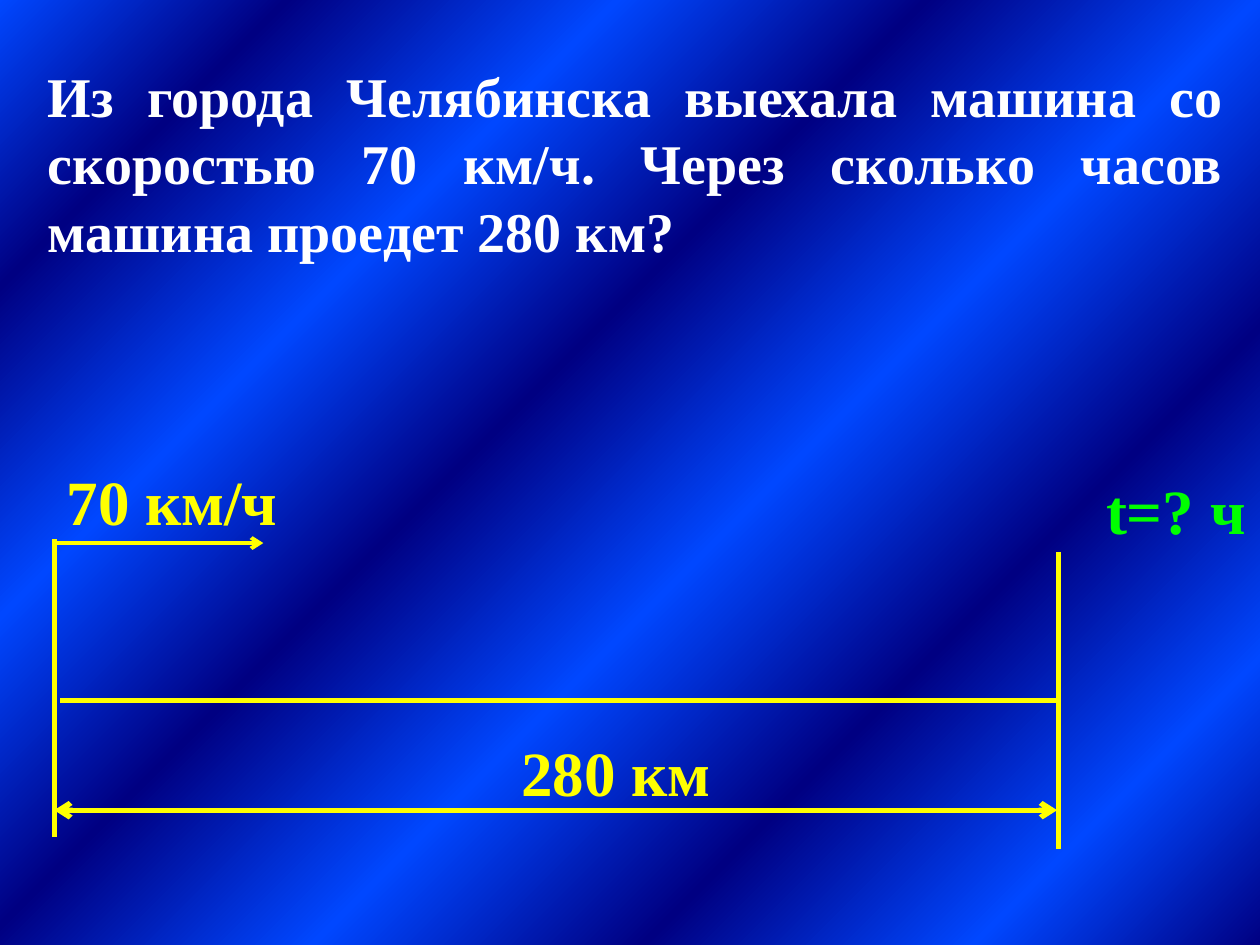
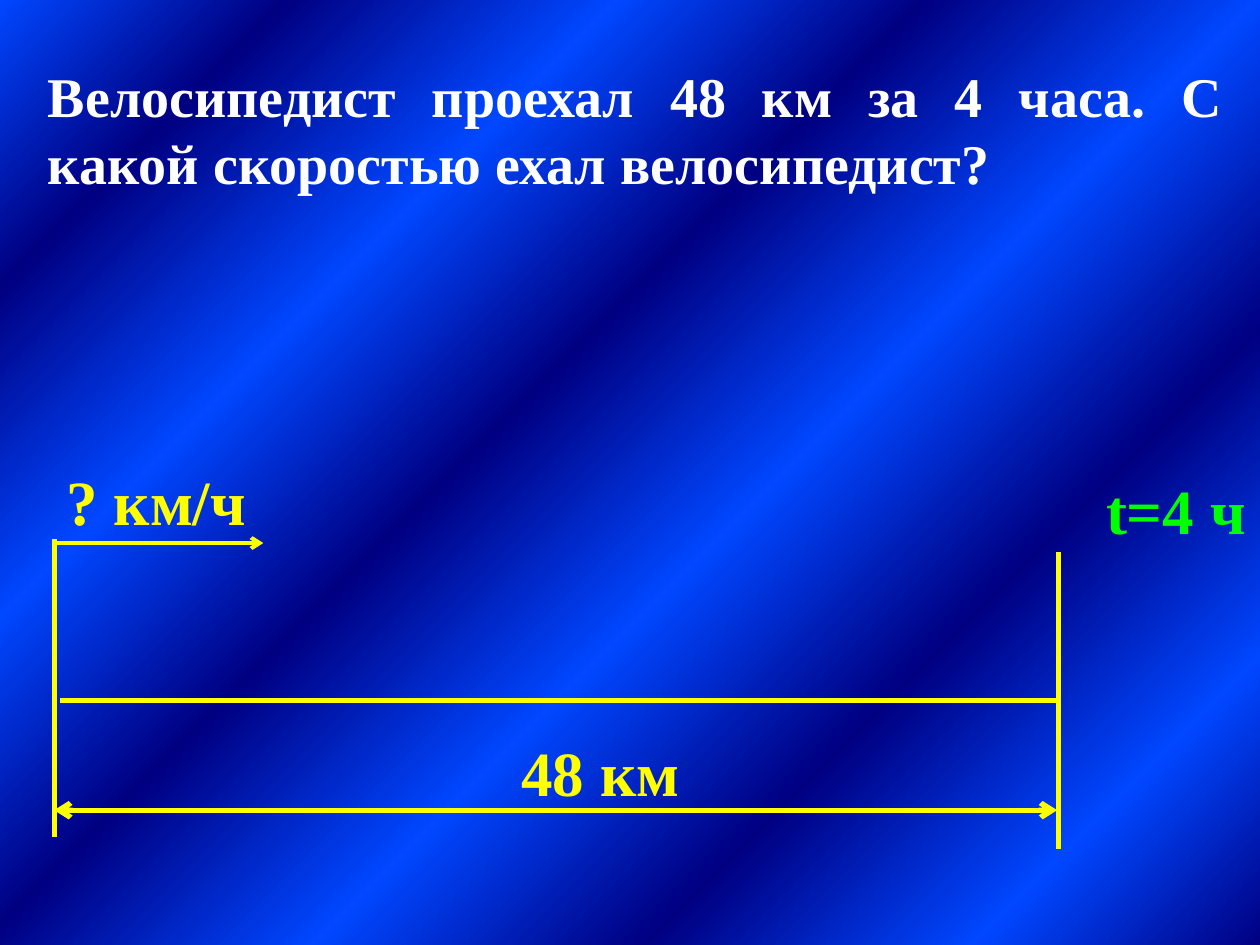
from lxml import etree
from pptx import Presentation
from pptx.dml.color import RGBColor
from pptx.enum.shapes import MSO_CONNECTOR
from pptx.enum.text import MSO_ANCHOR, MSO_AUTO_SIZE, PP_ALIGN
from pptx.oxml.ns import qn
from pptx.util import Emu, Pt

LEFT, JUSTIFY = PP_ALIGN.LEFT, PP_ALIGN.JUSTIFY
TOP, FIT_SHAPE = MSO_ANCHOR.TOP, MSO_AUTO_SIZE.SHAPE_TO_FIT_TEXT
STRAIGHT = MSO_CONNECTOR.STRAIGHT
TITLE_ONLY = 5

EMU_PER_PX = 9144  # 100 px to the inch
FONT = "Times New Roman"
WHITE, YELLOW, GREEN = "FFFFFF", "FFFF00", "00FF00"
NAVY, BLUE = "000082", "0047FF"
STRIPE_STOPS = (0, 13, 28, 43, 58, 72, 87, 100)

# Diagram geometry shared by both problems
START, END = 43, 840
ROAD_Y, DISTANCE_Y, SPEED_Y = 556, 643, 431
MARK_HEIGHT = 236


def px(length):
    return Emu(length * EMU_PER_PX)


def color(hex_string):
    return RGBColor.from_string(hex_string)


def write(shape, text, size=36, fill=YELLOW, align=LEFT, wrap=False):
    frame = shape.text_frame
    frame.word_wrap = wrap
    frame.auto_size = FIT_SHAPE
    frame.vertical_anchor = TOP
    paragraph = frame.paragraphs[0]
    paragraph.alignment = align
    run = paragraph.add_run()
    run.text = text
    run.font.name = FONT
    run.font.size = Pt(size)
    run.font.bold = True
    run.font.color.rgb = color(fill)


class Deck:
    def __init__(self):
        self.presentation = Presentation()
        self.presentation.slide_width = px(1000)
        self.presentation.slide_height = px(750)
        self.slide = None
        self.paint_background()

    def paint_background(self):
        """Striped gradient on the master, running from the far corner."""
        master = self.presentation.slide_master
        master.background.fill.gradient()
        gradient = master.element.cSld.xpath("./p:bg/p:bgPr/a:gradFill")[0]
        for child in list(gradient):
            gradient.remove(child)
        stops = etree.SubElement(gradient, qn("a:gsLst"))
        for index, position in enumerate(STRIPE_STOPS):
            stop = etree.SubElement(stops, qn("a:gs"), pos=str(position * 1000))
            etree.SubElement(stop, qn("a:srgbClr"), val=(NAVY, BLUE)[index % 2])
        circle = etree.SubElement(gradient, qn("a:path"), path="circle")
        etree.SubElement(circle, qn("a:fillToRect"), l="100000", t="100000")

    def add_slide(self):
        layout = self.presentation.slide_layouts[TITLE_ONLY]
        self.slide = self.presentation.slides.add_slide(layout)

    def title(self, text, height):
        shape = self.slide.shapes.title
        shape.left, shape.top = px(28), px(44)
        shape.width, shape.height = px(953), px(height)
        write(shape, text, size=32, fill=WHITE, align=JUSTIFY, wrap=True)

    def label(self, text, left, top, width, fill=YELLOW):
        shape = self.slide.shapes.add_textbox(px(left), px(top), px(width), px(71))
        write(shape, text, fill=fill)

    def line(self, x1, y1, x2, y2, width=3, arrows=()):
        connector = self.slide.shapes.add_connector(
            STRAIGHT, px(x1), px(y1), px(x2), px(y2))
        connector.line.color.rgb = color(YELLOW)
        connector.line.width = Pt(width)
        outline = connector.line._get_or_add_ln()
        for end in arrows:
            etree.SubElement(outline, qn(f"a:{end}"), type="arrow")
        etree.SubElement(connector.element.spPr, qn("a:effectLst"))

    def motion_problem(self, question, height, speed, time, distance):
        """One slide: the question above its motion diagram.

        Speed and distance are pairs of text and label width.
        """
        self.add_slide()
        self.title(question, height)
        # Distance arrow, end marks, speed arrow and road
        self.line(START, DISTANCE_Y, END - 1, DISTANCE_Y, arrows=("headEnd", "tailEnd"))
        for x, y in ((START, 428), (END, 438)):
            self.line(x, y, x, y + MARK_HEIGHT)
        self.line(START, SPEED_Y, 209, SPEED_Y, width=2.25, arrows=("tailEnd",))
        self.line(START + 5, ROAD_Y, END, ROAD_Y)
        # Known and unknown values
        speed_text, speed_width = speed
        distance_text, distance_width = distance
        self.label(speed_text, START, 362, speed_width)
        self.label(time, 868, 369, 132, fill=GREEN)
        self.label(distance_text, 404, 577, distance_width)


def main():
    deck = Deck()
    deck.motion_problem(
        "Из города Челябинска выехала машина со скоростью 70 км/ч. "
        "Через сколько часов машина проедет 280 км?",
        height=172, speed=("70 км/ч", 189), time="t=? ч", distance=("280 км", 172))
    deck.motion_problem(
        "Велосипедист проехал 48 км за 4 часа. С какой скоростью ехал велосипедист?",
        height=118, speed=("? км/ч", 164), time="t=4 ч", distance=("48 км", 147))
    deck.presentation.save("out.pptx")


if __name__ == "__main__":
    main()
